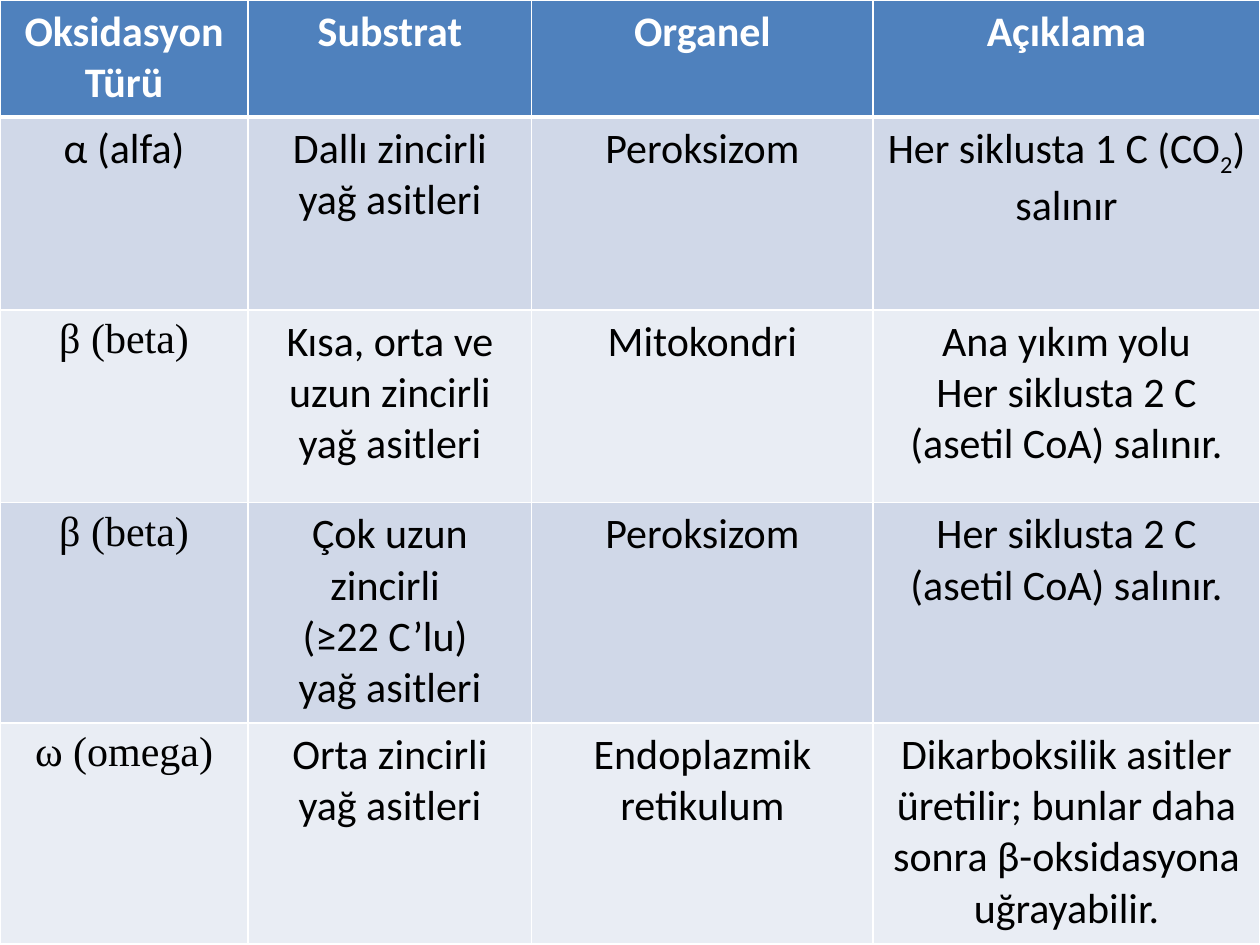
import pptx
import pptx.dml.color
import pptx.enum.text
import pptx.util
from dataclasses import dataclass
from lxml import etree

Inches = pptx.util.Inches
Pt = pptx.util.Pt


@dataclass(frozen=True)
class Theme:
    header_fill: str = "4F81BD"
    band_fills: tuple = ("D0D8E8", "E9EDF4")
    header_text: str = "FFFFFF"
    body_text: str = "000000"
    border: str = "FFFFFF"
    font: str = "Calibri"
    greek_font: str = "Times New Roman"
    text_size: int = 24
    border_width: int = 1
    header_rule_width: int = 3


THEME = Theme()
COLUMN_WIDTHS = (1.97, 2.25, 2.71, 3.07)
ROW_HEIGHTS = (0.93, 1.53, 1.53, 1.75, 1.75)

# A line break starts a new paragraph; "₂" becomes a lowered 2
HEADINGS = ("Oksidasyon Türü", "Substrat", "Organel", "Açıklama")
OXIDATIONS = (
    ("α (alfa)", "Dallı zincirli yağ asitleri", "Peroksizom",
     "Her siklusta 1 C (CO₂) salınır"),
    ("β (beta)", "Kısa, orta ve uzun zincirli yağ asitleri", "Mitokondri",
     "Ana yıkım yolu\nHer siklusta 2 C (asetil CoA) salınır."),
    ("β (beta)", "Çok uzun zincirli \n(≥22 C’lu) \nyağ asitleri", "Peroksizom",
     "Her siklusta 2 C (asetil CoA) salınır."),
    ("ω (omega)", "Orta zincirli yağ asitleri", "Endoplazmik retikulum",
     "Dikarboksilik asitler üretilir; bunlar daha sonra "
     "β-oksidasyona uğrayabilir."),
)


def rgb(color):
    return pptx.dml.color.RGBColor.from_string(color)


def set_border(cell, side, width):
    """Draw one cell edge; side is L, R, T or B."""
    properties = cell._tc.get_or_add_tcPr()
    namespace = "{%s}" % properties.nsmap["a"]
    line = etree.SubElement(properties, namespace + "ln" + side, w=str(Pt(width)))
    fill = etree.SubElement(line, namespace + "solidFill")
    etree.SubElement(fill, namespace + "srgbClr", val=THEME.border)


def add_runs(paragraph, text):
    """Write the text, lowering each subscript 2."""
    before, mark, after = text.partition("₂")
    paragraph.add_run().text = before
    if mark:
        subscript = paragraph.add_run()
        subscript.text = "2"
        subscript._r.get_or_add_rPr().set("baseline", "-25000")
        paragraph.add_run().text = after


def write_cell(cell, text, font_name, color, bold):
    frame = cell.text_frame
    for index, line in enumerate(text.split("\n")):
        paragraph = frame.add_paragraph() if index else frame.paragraphs[0]
        add_runs(paragraph, line)
        paragraph.alignment = pptx.enum.text.PP_ALIGN.CENTER
        paragraph.font.name = font_name
        paragraph.font.size = Pt(THEME.text_size)
        paragraph.font.bold = bold
        paragraph.font.color.rgb = rgb(color)


def style_cell(cell, row):
    """Borders come before the fill in a cell's properties."""
    rule, thin = THEME.header_rule_width, THEME.border_width
    set_border(cell, "L", thin)
    set_border(cell, "R", thin)
    set_border(cell, "T", rule if row == 1 else thin)
    set_border(cell, "B", rule if row == 0 else thin)
    cell.fill.solid()
    fill = THEME.band_fills[(row - 1) % 2] if row else THEME.header_fill
    cell.fill.fore_color.rgb = rgb(fill)


def add_oxidation_table(slide):
    rows = (HEADINGS,) + OXIDATIONS
    table = slide.shapes.add_table(
        len(rows), len(HEADINGS), Inches(0), Inches(0),
        Inches(sum(COLUMN_WIDTHS)), Inches(sum(ROW_HEIGHTS))).table
    for column, width in zip(table.columns, COLUMN_WIDTHS):
        column.width = Inches(width)
    for table_row, height in zip(table.rows, ROW_HEIGHTS):
        table_row.height = Inches(height)

    for row, texts in enumerate(rows):
        for column, text in enumerate(texts):
            cell = table.cell(row, column)
            style_cell(cell, row)
            # Type names after alpha use the serif face
            greek = column == 0 and row > 1
            write_cell(cell, text,
                       THEME.greek_font if greek else THEME.font,
                       THEME.body_text if row else THEME.header_text,
                       bold=row == 0)


def main():
    presentation = pptx.Presentation()
    presentation.slide_width = Inches(10)
    presentation.slide_height = Inches(7.5)
    slide = presentation.slides.add_slide(presentation.slide_layouts[6])
    add_oxidation_table(slide)
    presentation.save("out.pptx")


if __name__ == "__main__":
    main()
